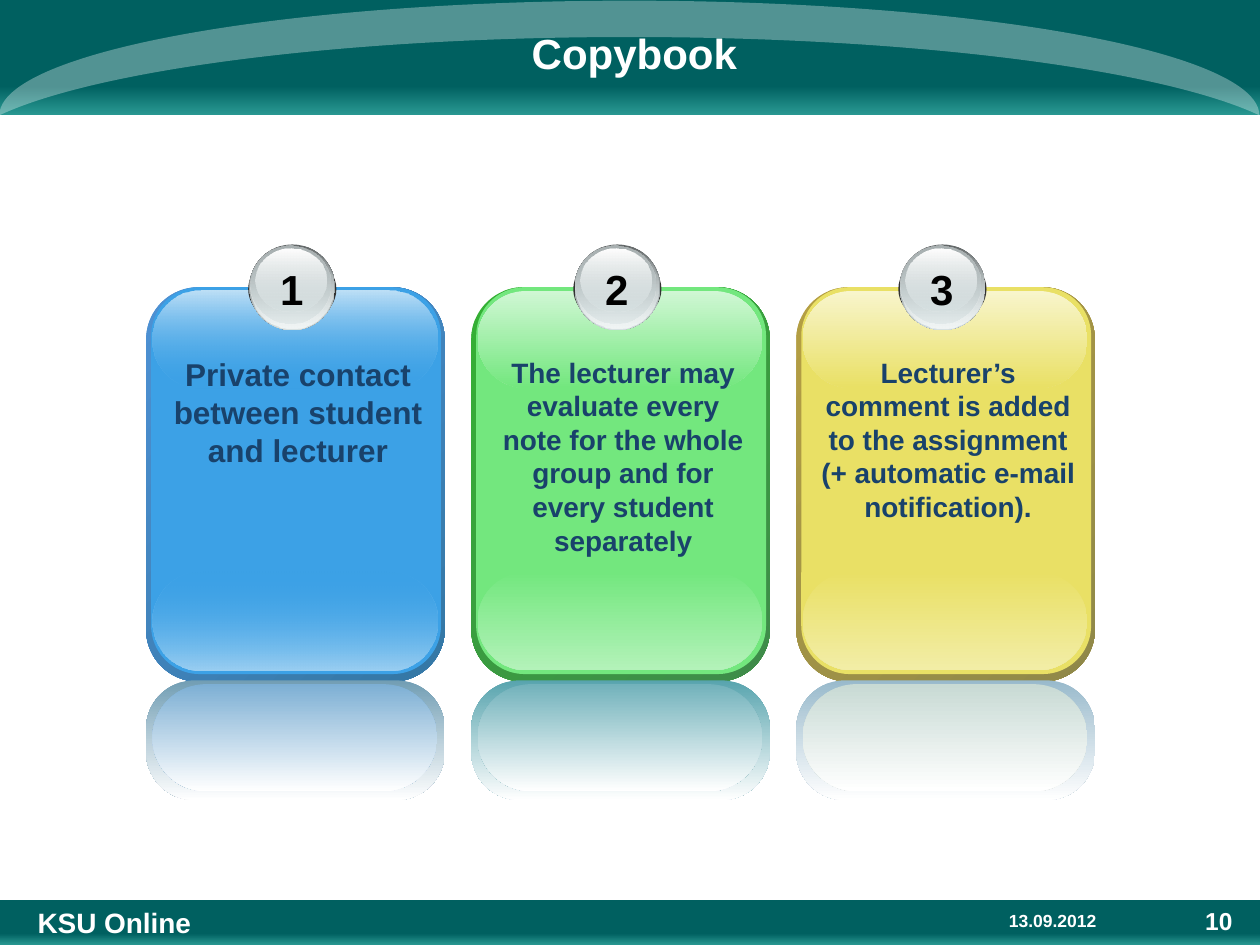
from dataclasses import dataclass
from lxml import etree
from pptx import Presentation
from pptx.dml.color import RGBColor
from pptx.enum.shapes import MSO_SHAPE
from pptx.enum.text import MSO_ANCHOR, PP_ALIGN
from pptx.oxml.ns import qn
from pptx.util import Inches, Pt

RECTANGLE, ROUNDED = MSO_SHAPE.RECTANGLE, MSO_SHAPE.ROUNDED_RECTANGLE
OVAL, MOON = MSO_SHAPE.OVAL, MSO_SHAPE.MOON
LEFT, CENTER, RIGHT = PP_ALIGN.LEFT, PP_ALIGN.CENTER, PP_ALIGN.RIGHT
MIDDLE = MSO_ANCHOR.MIDDLE


@dataclass(frozen=True)
class Theme:
    font: str = "Arial"
    white: str = "FFFFFF"
    black: str = "000000"
    ink: str = "19426B"
    teal: str = "006060"
    light_teal: str = "289791"
    badge_shadow: str = "333333"
    badge_dark: str = "636869"
    badge_mid: str = "AAB2B3"
    badge_light: str = "D6E1E2"
    badge_pale: str = "F1F5F5"
    title_size: int = 24
    footer_size: int = 16
    number_size: int = 14
    date_size: int = 10


theme = Theme()


def add_filled(shapes, kind, left, top, width, height, stops, angle=90, adjust=None):
    shape = shapes.add_shape(kind, Inches(left), Inches(top), Inches(width), Inches(height))
    shape.shadow.inherit = False
    shape.line.fill.background()
    if adjust is not None:
        shape.adjustments[0] = adjust
    properties = shape.element.spPr
    if len(stops) == 1:
        fill = etree.Element(qn("a:solidFill"))
        parents = [fill]
    else:
        fill = etree.Element(qn("a:gradFill"), rotWithShape="1")
        stop_list = etree.SubElement(fill, qn("a:gsLst"))
        parents = [etree.SubElement(stop_list, qn("a:gs"), pos=str(stop[0] * 1000)) for stop in stops]
        etree.SubElement(fill, qn("a:lin"), ang=str(angle * 60000), scaled="0")
    for parent, (_, color, opacity) in zip(parents, stops):
        color_node = etree.SubElement(parent, qn("a:srgbClr"), val=color)
        if opacity < 100:
            etree.SubElement(color_node, qn("a:alpha"), val=str(opacity * 1000))
    properties.find(qn("a:prstGeom")).addnext(fill)
    return shape


def write_text(box, text, size, color, align, wrap=True):
    frame = box.text_frame
    frame.word_wrap = wrap
    para = frame.paragraphs[0]
    para.text = text
    para.alignment = align
    para.font.name = theme.font
    para.font.size = Pt(size)
    para.font.bold = True
    para.font.color.rgb = RGBColor.from_string(color)


deck = Presentation()
deck.slide_width, deck.slide_height = Inches(10), Inches(7.5)
page = deck.slides.add_slide(deck.slide_layouts[5])

band = [(75, theme.teal, 100), (100, theme.light_teal, 100)]
for top, height in [(7.14, 0.36), (0, 0.91)]:
    add_filled(page.shapes, RECTANGLE, 0, top, 10, height, band)
arc = add_filled(page.shapes, MOON, 4.54, -4.54, 0.91, 10, [(0, theme.white, 32)], adjust=0.317)
arc.rotation = 90

title = page.shapes.title
title.left, title.top, title.width, title.height = Inches(1.06), Inches(0.17), Inches(7.95), Inches(0.5)
title.text_frame.vertical_anchor = MIDDLE
write_text(title, "Copybook", theme.title_size, theme.white, CENTER)
arc.element.addnext(title.element)

footers = [
    (7.91, 7.17, 1.26, 0.28, "13.09.2012", theme.date_size, LEFT),
    (0.2, 7.14, 3.47, 0.27, "KSU Online", theme.footer_size, LEFT),
    (9.29, 7.14, 0.59, 0.36, "10", theme.number_size, RIGHT),
]
for left, top, width, height, text, size, align in footers:
    box = page.shapes.add_textbox(Inches(left), Inches(top), Inches(width), Inches(height))
    write_text(box, text, size, theme.white, align)

badge_layers = [
    (0.81, 2.01, 0.7, 0.57, [(0, theme.badge_shadow, 100)]),
    (0.82, 1.94, 0.68, 0.68, [(0, theme.badge_dark, 100), (100, theme.badge_light, 100)]),
    (0.83, 1.95, 0.66, 0.66, [(0, theme.badge_light, 0), (100, theme.badge_pale, 100)]),
    (0.83, 1.95, 0.63, 0.62, [(0, theme.badge_mid, 100), (100, theme.badge_light, 48)]),
    (0.87, 1.97, 0.56, 0.5, [(0, theme.white, 100), (100, theme.badge_light, 38)]),
]

cards = [
    ("Private contact between student and lecturer", 18, 1.0, 0,
     "4E91D4", "3477A4", "3CA1E6", "9BCFF2", "BEE0F7", "729EB4", "7DAFD4"),
    ("The lecturer may evaluate every note for the whole group and for every student separately", 16, 1.7, 100,
     "34B034", "3F8B4A", "73E77E", "B3F2B9", "D0F7D4", "58A4AE", "72B2BB"),
    ("Lecturer’s comment is added to the assignment (+ automatic e-mail notification).", 16, 1.44, 100,
     "B59F43", "8F8849", "E9E065", "F2EDA6", "F8F5CC", "99BACC", "C8DAD4"),
]

for index, card in enumerate(cards):
    text, size, text_height, fade, edge, edge_dark, face, glow, shine, mirror, mirror_inner = card
    left = 1.16 + 2.58 * index
    shapes = page.shapes.add_group_shape().shapes
    panel_layers = [
        (0, 2.28, 2.37, 3.13, 0.175, 45, [(0, edge, 100), (100, edge_dark, 100)]),
        (0.04, 2.28, 2.3, 3.07, 0.167, 90, [(0, face, 100)]),
        (0.05, 4.54, 2.26, 0.78, 0.5, 90, [(0, face, fade), (100, glow, 100)]),
        (0.05, 2.31, 2.26, 0.77, 0.5, 90, [(0, shine, 100), (100, face, fade)]),
        (0, 5.4, 2.37, 0.95, 0.404, 90, [(0, mirror, 100), (100, theme.white, 100)]),
        (0.05, 5.43, 2.26, 0.85, 0.5, 90, [(0, mirror_inner, 100), (100, theme.white, 100)]),
    ]
    for offset, top, width, height, adjust, angle, stops in panel_layers:
        add_filled(shapes, ROUNDED, left + offset, top, width, height, stops, angle, adjust)
    for offset, top, width, height, stops in badge_layers:
        add_filled(shapes, OVAL, left + offset, top, width, height, stops)
    number = shapes.add_textbox(Inches(left + 0.96), Inches(2.04), Inches(0.39), Inches(0.5))
    write_text(number, str(index + 1), theme.title_size, theme.black, CENTER, wrap=False)
    body = shapes.add_textbox(Inches(left + 0.08), Inches(2.77), Inches(2.25), Inches(text_height))
    write_text(body, text, size, theme.ink, CENTER)

deck.save("out.pptx")
